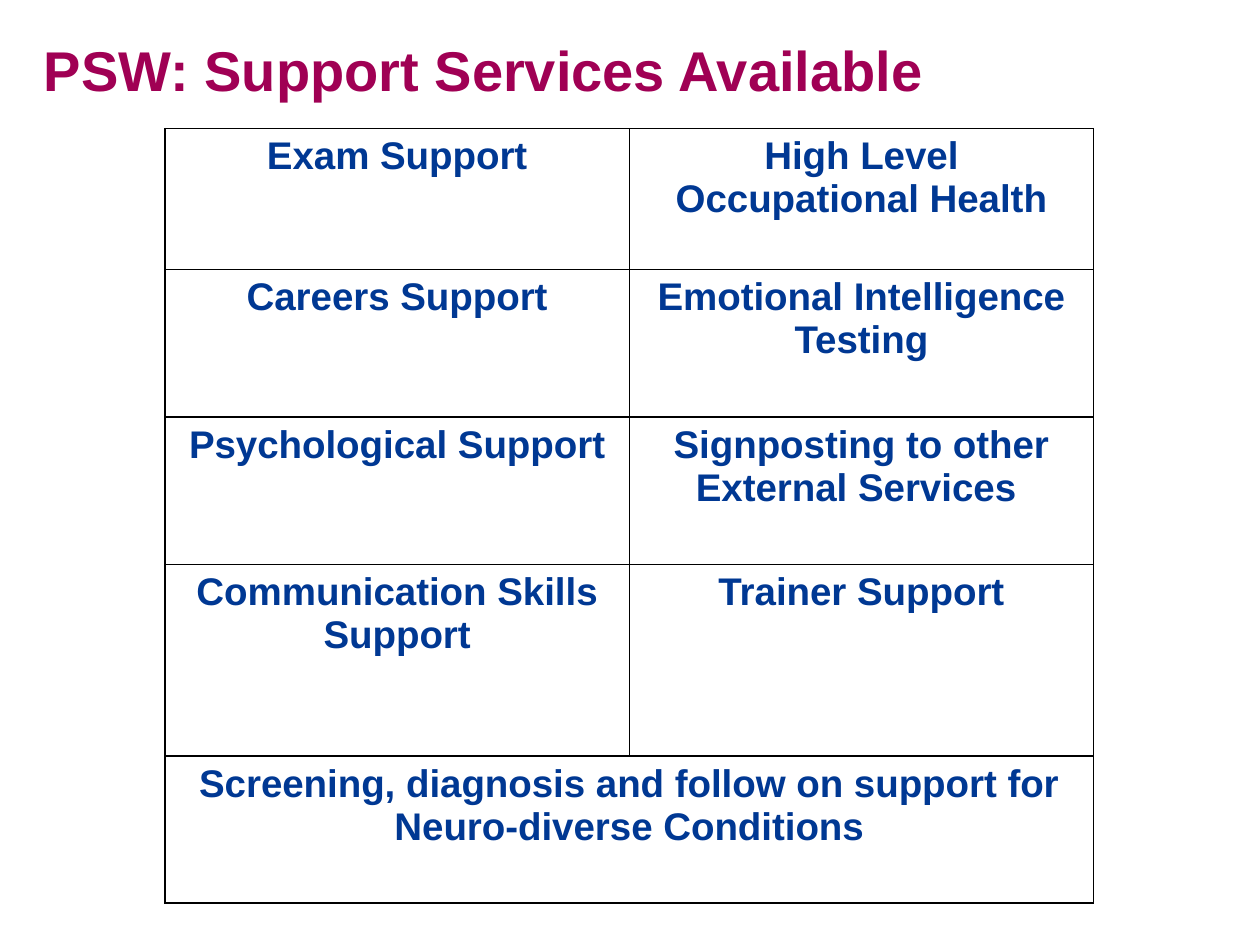
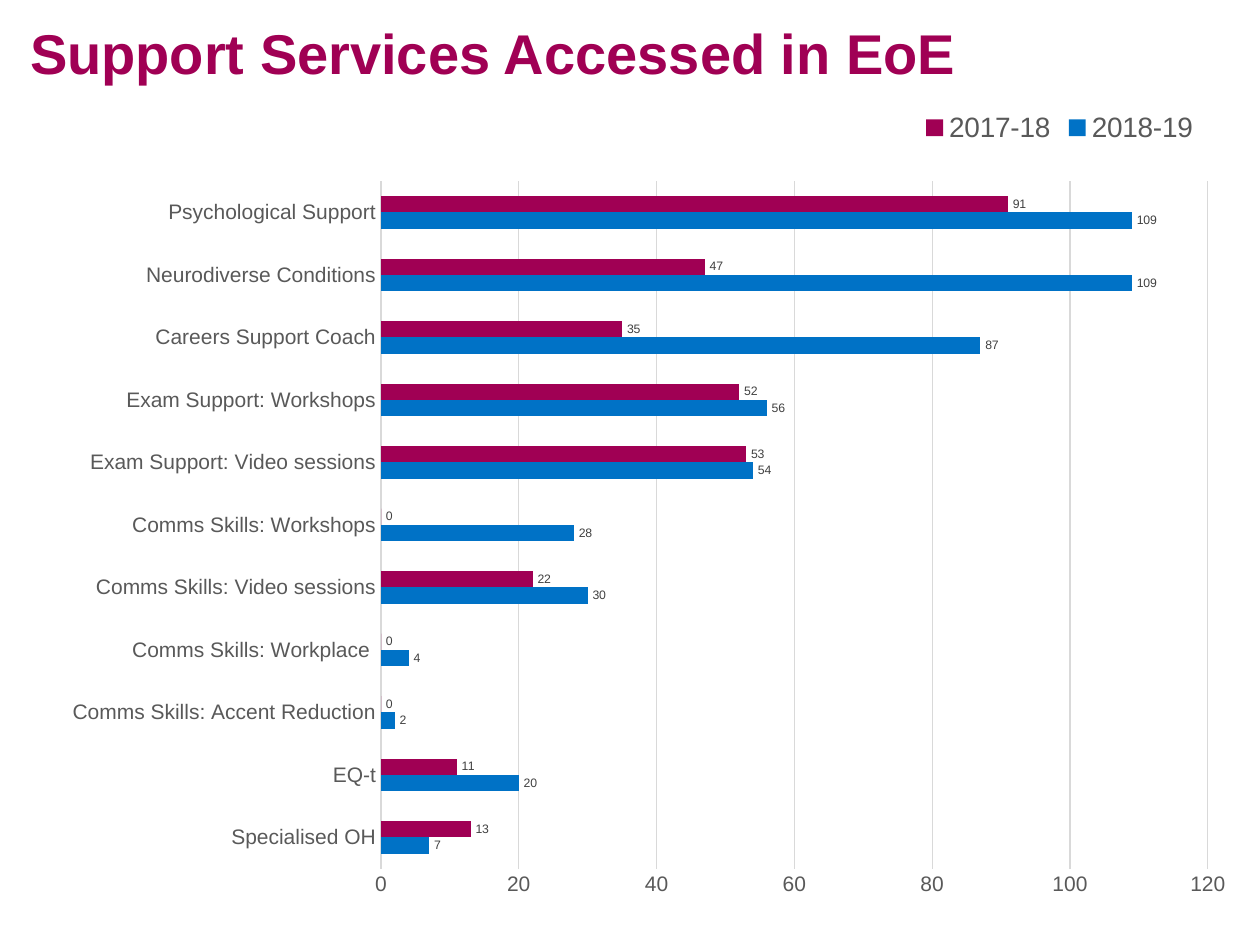
"""Build two slides on the support services offered and accessed."""
from dataclasses import dataclass

import lxml.etree
import pptx
import pptx.chart.data
import pptx.dml.color
import pptx.enum.chart
import pptx.enum.text
import pptx.oxml
import pptx.oxml.ns
import pptx.util

Inches = pptx.util.Inches
Pt = pptx.util.Pt


@dataclass(frozen=True)
class Theme:
    font: str = "Arial"
    plum: str = "A00054"
    navy: str = "003893"
    blue: str = "0072C6"
    black: str = "000000"
    axis_text: str = "595959"
    label_text: str = "404040"
    grid: str = "D9D9D9"
    title_size: int = 32
    cell_size: int = 22
    legend_size: int = 16
    axis_size: int = 12
    label_size: int = 7
    border_width: float = 1
    grid_width: float = 0.75


THEME = Theme()

SERVICES = [
    ("Exam Support", "High Level Occupational Health"),
    ("Careers Support", "Emotional Intelligence Testing"),
    ("Psychological Support", "Signposting to other External Services "),
    ("Communication Skills Support", "Trainer Support"),
    ("Screening, diagnosis and follow on support for Neuro-diverse Conditions",),
]
ROW_HEIGHTS = [1.12, 1.17, 1.17, 1.52, 1.17]

ACCESS_CATEGORIES = [
    "Specialised OH",
    "EQ-t",
    "Comms Skills: Accent Reduction",
    "Comms Skills: Workplace ",
    "Comms Skills: Video sessions",
    "Comms Skills: Workshops",
    "Exam Support: Video sessions",
    "Exam Support: Workshops",
    "Careers Support Coach",
    "Neurodiverse Conditions",
    "Psychological Support",
]
ACCESS_SERIES = [
    ("2018-19", THEME.blue, [7, 20, 2, 4, 30, 28, 54, 56, 87, 109, 109]),
    ("2017-18", THEME.plum, [13, 11, 0, 0, 22, 0, 53, 52, 35, 47, 91]),
]


def rgb(color):
    return pptx.dml.color.RGBColor.from_string(color)


def style_font(font, size, color, bold=False):
    font.name = THEME.font
    font.size = Pt(size)
    font.bold = bold
    font.color.rgb = rgb(color)


def style_line(line, color, width):
    line.color.rgb = rgb(color)
    line.width = Pt(width)


def add_title(slide, text, left, top, height):
    box = slide.shapes.add_textbox(Inches(left), Inches(top), Inches(8.5), Inches(height))
    frame = box.text_frame
    frame.word_wrap = True
    frame.margin_top = Inches(0.08)
    paragraph = frame.paragraphs[0]
    paragraph.text = text
    style_font(paragraph.font, THEME.title_size, THEME.plum, bold=True)


def add_borders(cell):
    properties = cell._tc.get_or_add_tcPr()
    for side in ("lnL", "lnR", "lnT", "lnB"):
        properties.append(pptx.oxml.parse_xml(
            f'<a:{side} {pptx.oxml.ns.nsdecls("a")} w="{Pt(THEME.border_width)}">'
            f'<a:solidFill><a:srgbClr val="{THEME.black}"/></a:solidFill></a:{side}>'))


def add_services_table(slide):
    column_count = len(SERVICES[0])
    frame = slide.shapes.add_table(len(SERVICES), column_count, Inches(1.31), Inches(1.02),
                                   Inches(7.37), Inches(sum(ROW_HEIGHTS)))
    table = frame.table
    table.first_row = False
    table.horz_banding = False
    for row, height in zip(table.rows, ROW_HEIGHTS):
        row.height = Inches(height)
    for cell in table.iter_cells():
        add_borders(cell)
        cell.fill.background()
    for row_index, names in enumerate(SERVICES):
        if len(names) < column_count:
            table.cell(row_index, 0).merge(table.cell(row_index, column_count - 1))
        for column_index, name in enumerate(names):
            paragraph = table.cell(row_index, column_index).text_frame.paragraphs[0]
            paragraph.text = name
            paragraph.alignment = pptx.enum.text.PP_ALIGN.CENTER
            style_font(paragraph.font, THEME.cell_size, THEME.navy, bold=True)


def set_layout(parent, position, **values):
    """Place a chart part by fractions of the chart area."""
    for old_layout in parent.findall(pptx.oxml.ns.qn("c:layout")):
        parent.remove(old_layout)
    layout = lxml.etree.Element(pptx.oxml.ns.qn("c:layout"))
    manual = lxml.etree.SubElement(layout, pptx.oxml.ns.qn("c:manualLayout"))
    for name, value in values.items():
        lxml.etree.SubElement(manual, pptx.oxml.ns.qn(f"c:{name}"), val=str(value))
    parent.insert(position, layout)


def style_axis(axis):
    axis.major_tick_mark = pptx.enum.chart.XL_TICK_MARK.NONE
    axis.minor_tick_mark = pptx.enum.chart.XL_TICK_MARK.NONE
    style_font(axis.tick_labels.font, THEME.axis_size, THEME.axis_text)


def style_axes(chart):
    style_axis(chart.category_axis)
    chart.category_axis.has_major_gridlines = False
    style_line(chart.category_axis.format.line, THEME.grid, THEME.grid_width)
    value_axis = chart.value_axis
    style_axis(value_axis)
    value_axis.minimum_scale = 0
    value_axis.maximum_scale = 120
    value_axis.major_unit = 20
    value_axis.format.line.fill.background()
    style_line(value_axis.major_gridlines.format.line, THEME.grid, THEME.grid_width)


def style_series(series, color):
    series.format.fill.solid()
    series.format.fill.fore_color.rgb = rgb(color)
    labels = series.data_labels
    labels.show_value = True
    labels.position = pptx.enum.chart.XL_LABEL_POSITION.OUTSIDE_END
    style_font(labels.font, THEME.label_size, THEME.label_text)


def add_legend(chart):
    chart.has_legend = True
    legend = chart.legend
    legend.position = pptx.enum.chart.XL_LEGEND_POSITION.BOTTOM
    legend.include_in_layout = False
    style_font(legend.font, THEME.legend_size, THEME.axis_text)
    set_layout(legend._element, 1, xMode="edge", yMode="edge", x=0.73, y=0.03)


def add_access_chart(slide):
    data = pptx.chart.data.CategoryChartData()
    data.categories = ACCESS_CATEGORIES
    for name, _, values in ACCESS_SERIES:
        data.add_series(name, values)
    frame = slide.shapes.add_chart(pptx.enum.chart.XL_CHART_TYPE.BAR_CLUSTERED, Inches(-0.08),
                                   Inches(0.65), Inches(10.08), Inches(6.63), data)
    chart = frame.chart
    chart.has_title = False
    style_font(chart.font, 10, THEME.black)
    plot = chart.plots[0]
    plot.gap_width = 182
    plot.overlap = 0
    plot.vary_by_categories = False
    for series, (_, color, _) in zip(plot.series, ACCESS_SERIES):
        style_series(series, color)
    style_axes(chart)
    add_legend(chart)
    plot_area = chart._chartSpace.chart.plotArea
    set_layout(plot_area, 0, layoutTarget="inner", xMode="edge", yMode="edge",
               x=0.308, y=0.119, w=0.651, h=0.823)


def main():
    presentation = pptx.Presentation()
    presentation.slide_width = Inches(10)
    presentation.slide_height = Inches(7.5)
    blank_layout = presentation.slide_layouts[6]

    services_slide = presentation.slides.add_slide(blank_layout)
    add_title(services_slide, "PSW: Support Services Available", 0.25, 0.2, 0.74)
    add_services_table(services_slide)

    access_slide = presentation.slides.add_slide(blank_layout)
    add_title(access_slide, "Support Services Accessed in EoE", 0.14, 0.07, 1.16)
    add_access_chart(access_slide)

    presentation.save("out.pptx")


if __name__ == "__main__":
    main()
